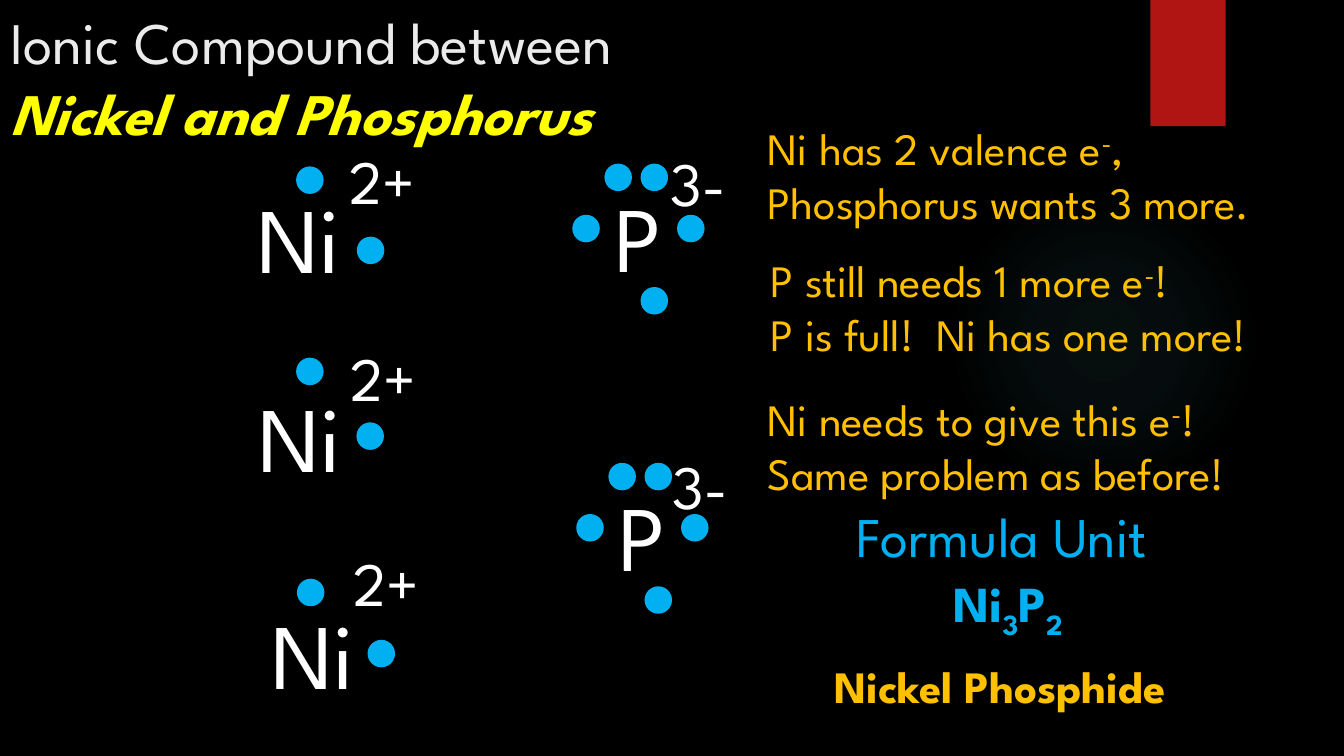
from dataclasses import dataclass

from pptx import Presentation, oxml as ox
from pptx.dml.color import RGBColor
from pptx.enum import shapes as es, text as et
from pptx.oxml.ns import qn
from pptx.util import Cm, Pt

HUE = {
    "black": "000000", "white": "FFFFFF", "pale": "EBEBEB", "red": "B01513",
    "yellow": "FFFF00", "gold": "FFC000", "blue": "00B0F0", "glow": "50B9C1",
}
FACE = "League Spartan"
DOT = 0.64  # electron diameter, cm
Point = tuple[float, float]
Run = tuple[str, int]  # text and baseline shift in percent


@dataclass
class Atom:
    sign: str
    size: Point
    at: Point
    ion: str
    ion_at: Point  # offsets from the symbol's corner
    dots: list[Point]


@dataclass
class Label:
    box: tuple[float, float, float, float]
    lines: list[list[Run]]
    size: int
    hue: str
    bold: bool = False
    wrap: bool = False


def color(name: str) -> RGBColor:
    return RGBColor.from_string(HUE[name])


def add_label(slide, label: Label) -> None:
    frame = slide.shapes.add_textbox(*map(Cm, label.box)).text_frame
    frame.word_wrap = label.wrap
    for i, line in enumerate(label.lines):
        para = frame.paragraphs[0] if i == 0 else frame.add_paragraph()
        font = para.font
        font.name, font.size, font.bold = FACE, Pt(label.size), label.bold
        font.color.rgb = color(label.hue)
        for words, shift in line:
            run = para.add_run()
            run.text = words
            if shift:
                run._r.get_or_add_rPr().set("baseline", str(shift * 1000))


def add_plain(slide, kind, box: tuple[float, ...], hue: str):
    shape = slide.shapes.add_shape(kind, *map(Cm, box))
    shape.shadow.inherit = False
    shape.fill.solid()
    shape.fill.fore_color.rgb = color(hue)
    shape.line.fill.background()
    return shape


def add_atom(slide, atom: Atom) -> None:
    x, y = atom.at
    dx, dy = atom.ion_at
    add_label(slide, Label((x, y, *atom.size), [[(atom.sign, 0)]], 66, "white"))
    add_label(slide, Label((x + dx, y + dy, 2.5, 2.13),
                           [[(atom.ion, 0)]], 44, "white"))
    for dx, dy in atom.dots:
        dot = add_plain(slide, es.MSO_SHAPE.OVAL, (x + dx, y + dy, DOT, DOT), "blue")
        dot.line.color.rgb = color("blue")
        dot.line.width = Pt(1.5)


def add_glow(slide) -> None:
    glow = add_plain(slide, es.MSO_SHAPE.OVAL, (23.9, 4.65, 7.82, 7.82), "glow")
    stops = "".join(
        f'<a:gs pos="{pos}000"><a:srgbClr val="{HUE["glow"]}">'
        f'<a:alpha val="{alpha}000"/></a:srgbClr></a:gs>'
        for pos, alpha in ((0, 7), (36, 6), (69, 0)))
    fade = ox.parse_xml(
        '<a:gradFill xmlns:a="http://schemas.openxmlformats.org/drawingml/2006/main">'
        f'<a:gsLst>{stops}</a:gsLst><a:path path="circle">'
        '<a:fillToRect l="50000" t="50000" r="50000" b="50000"/></a:path></a:gradFill>')
    props = glow._element.spPr
    props.replace(props.find(qn("a:solidFill")), fade)


def set_title(slide) -> None:
    title = slide.shapes.title
    title.left, title.top, title.width, title.height = map(Cm, (0, 0.08, 19.84, 3.68))
    frame = title.text_frame
    frame.word_wrap = True
    frame.auto_size = et.MSO_AUTO_SIZE.NONE
    frame.vertical_anchor = et.MSO_ANCHOR.MIDDLE
    para = frame.paragraphs[0]
    para.alignment = et.PP_ALIGN.LEFT
    para.font.name, para.font.size = FACE, Pt(42)
    for words, hue, strong in (("Ionic Compound between ", "pale", False),
                               ("Nickel and Phosphorus", "yellow", True)):
        run = para.add_run()
        run.text = words
        run.font.color.rgb = color(hue)
        run.font.bold = run.font.italic = strong


NI, P = (3.05, 3.07), (1.47, 3.07)
P_DOTS = [(-0.79, 1.02), (0.93, 2.84), (1.85, 1.02), (0.93, -0.27), (0.02, -0.27)]
ATOMS = [
    Atom("Ni", NI, (6.25, 4.45), "2+", (2.31, -0.97), [(2.77, 1.54), (1.24, -0.23)]),
    Atom("Ni", NI, (6.27, 9.45), "2+", (2.31, -1.02), [(2.74, 1.22), (1.22, -0.41)]),
    Atom("Ni", NI, (6.6, 14.91), "2+", (2.06, -1.3), [(2.69, 1.24), (0.91, -0.3)]),
    Atom("P", P, (15.24, 4.42), "3-", (1.42, -0.89), P_DOTS),
    Atom("P", P, (15.34, 11.96), "3-", (1.37, -0.81), P_DOTS),
]
LABELS = [
    # Steps of the electron transfer
    Label((19.1, 2.92, 14.76, 3),
          [[("Ni has 2 valence e", 0), ("-", 30), (", Phosphorus wants 3 more.", 0)]],
          32, "gold", wrap=True),
    Label((19.18, 6.25, 14.2, 3),
          [[("P still needs 1 more e", 0), ("-", 30), ("!", 0)],
           [("P is full!  Ni has one more!", 0)]], 32, "gold", wrap=True),
    Label((19.1, 9.75, 14.68, 3),
          [[("Ni needs to give this e", 0), ("-", 30), ("!", 0)],
           [("Same problem as before!", 0)]], 32, "gold", wrap=True),
    # Formula and name
    Label((21.34, 12.52, 9.47, 1.96), [[("Formula Unit", 0)]], 40, "blue"),
    Label((23.77, 14.3, 4.17, 1.8),
          [[("Ni", 0), ("3", -25), ("P", 0), ("2", -25)]], 36, "blue", True),
    Label((20.78, 16.48, 10.03, 1.63), [[("Nickel Phosphide", 0)]], 32, "gold", True),
]


def main() -> None:
    deck = Presentation()
    deck.slide_width, deck.slide_height = Cm(33.87), Cm(19.05)
    slide = deck.slides.add_slide(deck.slide_layouts[5])

    # Backdrop
    slide.background.fill.solid()
    slide.background.fill.fore_color.rgb = color("black")
    add_glow(slide)
    add_plain(slide, es.MSO_SHAPE.RECTANGLE, (28.99, 0, 1.9, 3.18), "red")

    # Content
    set_title(slide)
    for atom in ATOMS:
        add_atom(slide, atom)
    for label in LABELS:
        add_label(slide, label)
    deck.save("out.pptx")


if __name__ == "__main__":
    main()
